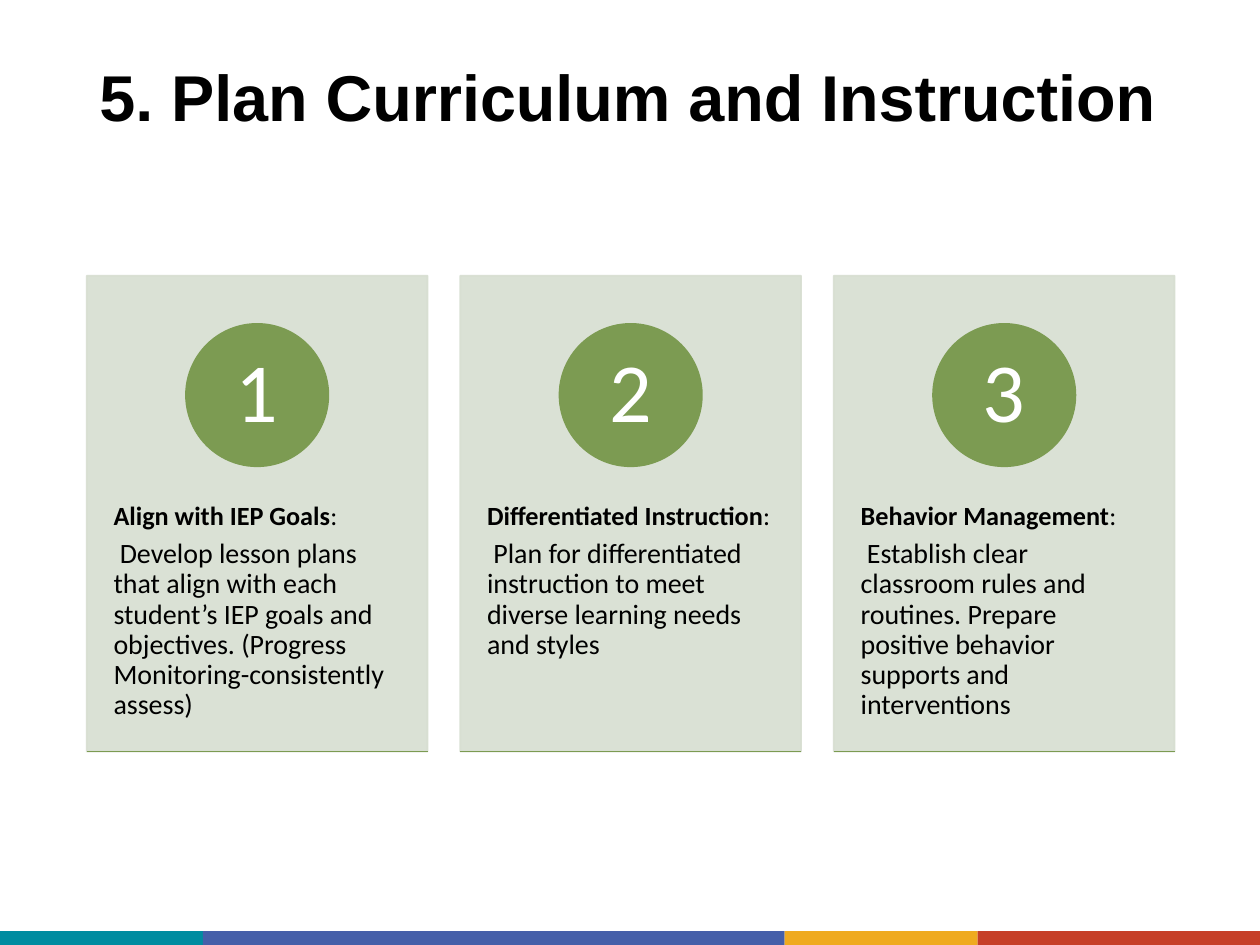
from lxml.etree import SubElement
from pptx import Presentation
from pptx.dml.color import RGBColor
from pptx.enum.shapes import MSO_CONNECTOR, MSO_SHAPE
from pptx.enum.text import MSO_ANCHOR, PP_ALIGN
from pptx.oxml.ns import qn
from pptx.util import Cm, Pt

COLORS = {
    "black": "000000", "white": "FFFFFF", "card": "D7DED1", "green": "7C9B52",
    "teal": "008CA0", "blue": "455FA9", "yellow": "EFAA1F", "red": "C63F28",
}
CARDS = [
    ("Align with IEP Goals",
     " Develop lesson plans that align with each student’s IEP goals and objectives. "
     "(Progress Monitoring-consistently assess)"),
    ("Differentiated Instruction",
     " Plan for differentiated instruction to meet diverse learning needs and styles"),
    ("Behavior Management",
     " Establish clear classroom rules and routines. Prepare positive behavior "
     "supports and interventions"),
]
STRIPES = [("teal", 0, 4.09), ("blue", 4.09, 15.82),
           ("yellow", 15.82, 19.71), ("red", 19.71, 25.4)]
LEFT, CARD_WIDTH, CARD_PITCH = 1.75, 6.87, 7.53
CARD_TOP, CARD_BOTTOM = 5.56, 15.15
CIRCLE_TOP, CIRCLE_SIZE = 6.53, 2.87


def add_filled_shape(kind, left, top, width, height, color):
    shape = slide.shapes.add_shape(kind, Cm(left), Cm(top), Cm(width), Cm(height))
    shape.shadow.inherit = False
    shape.fill.solid()
    shape.fill.fore_color.rgb = RGBColor.from_string(COLORS[color])
    shape.line.fill.background()
    return shape


def add_run(paragraph, text, size, color="black", bold=False, name="Calibri"):
    run = paragraph.add_run()
    run.text = text
    for attribute, value in {"size": Pt(size), "bold": bold, "name": name}.items():
        setattr(run.font, attribute, value)
    run.font.color.rgb = RGBColor.from_string(COLORS[color])
    paragraph.line_spacing = 0.9


presentation = Presentation()
presentation.slide_width, presentation.slide_height = Cm(25.4), Cm(19.05)
slide = presentation.slides.add_slide(presentation.slide_layouts[5])

# Footer stripes
for color, start, end in STRIPES:
    add_filled_shape(MSO_SHAPE.RECTANGLE, start, 18.77, end - start, 0.28, color)

# Title
title = slide.shapes.title
title_box = {"left": 1.75, "top": 1.02, "width": 21.9, "height": 2.03}
for attribute, value in title_box.items():
    setattr(title, attribute, Cm(value))
title.text_frame.vertical_anchor = MSO_ANCHOR.MIDDLE
paragraph = title.text_frame.paragraphs[0]
paragraph.alignment = PP_ALIGN.LEFT
add_run(paragraph, "5. Plan Curriculum and Instruction", 37, bold=True, name="Arial")

# Numbered cards
for index, (heading, description) in enumerate(CARDS):
    left = LEFT + index * CARD_PITCH

    card = add_filled_shape(MSO_SHAPE.RECTANGLE, left, CARD_TOP,
                            CARD_WIDTH, CARD_BOTTOM - CARD_TOP, "card")
    card.line.color.rgb = RGBColor.from_string(COLORS["card"])
    card.line.width = Pt(1)
    for color_element in card.element.spPr.iter(qn("a:srgbClr")):
        SubElement(color_element, qn("a:alpha"), val="90000")

    text_box = slide.shapes.add_textbox(Cm(left), Cm(9.22), Cm(CARD_WIDTH), Cm(5.74))
    frame = text_box.text_frame
    frame.word_wrap = True
    frame.margin_left = frame.margin_right = Cm(0.54)
    frame.margin_top = frame.margin_bottom = Cm(0.91)
    paragraph = frame.paragraphs[0]
    paragraph.space_after = Pt(5)
    add_run(paragraph, heading, 15, bold=True)
    add_run(paragraph, ":", 15)
    add_run(frame.add_paragraph(), description, 16)

    circle = add_filled_shape(MSO_SHAPE.OVAL, left + (CARD_WIDTH - CIRCLE_SIZE) / 2,
                              CIRCLE_TOP, CIRCLE_SIZE, CIRCLE_SIZE, "green")
    circle.line.color.rgb = RGBColor.from_string(COLORS["green"])
    circle.line.width = Pt(1)
    frame = circle.text_frame
    frame.vertical_anchor = MSO_ANCHOR.MIDDLE
    frame.margin_left = frame.margin_right = Cm(0.23)
    frame.margin_top = frame.margin_bottom = Cm(0.03)
    paragraph = frame.paragraphs[0]
    paragraph.alignment = PP_ALIGN.CENTER
    add_run(paragraph, str(index + 1), 48, "white")

    rule = slide.shapes.add_connector(MSO_CONNECTOR.STRAIGHT, Cm(left), Cm(CARD_BOTTOM),
                                      Cm(left + CARD_WIDTH), Cm(CARD_BOTTOM))
    rule.line.color.rgb = RGBColor.from_string(COLORS["green"])
    rule.line.width = Pt(1)
    SubElement(rule.element.spPr, qn("a:effectLst"))

presentation.save("out.pptx")
